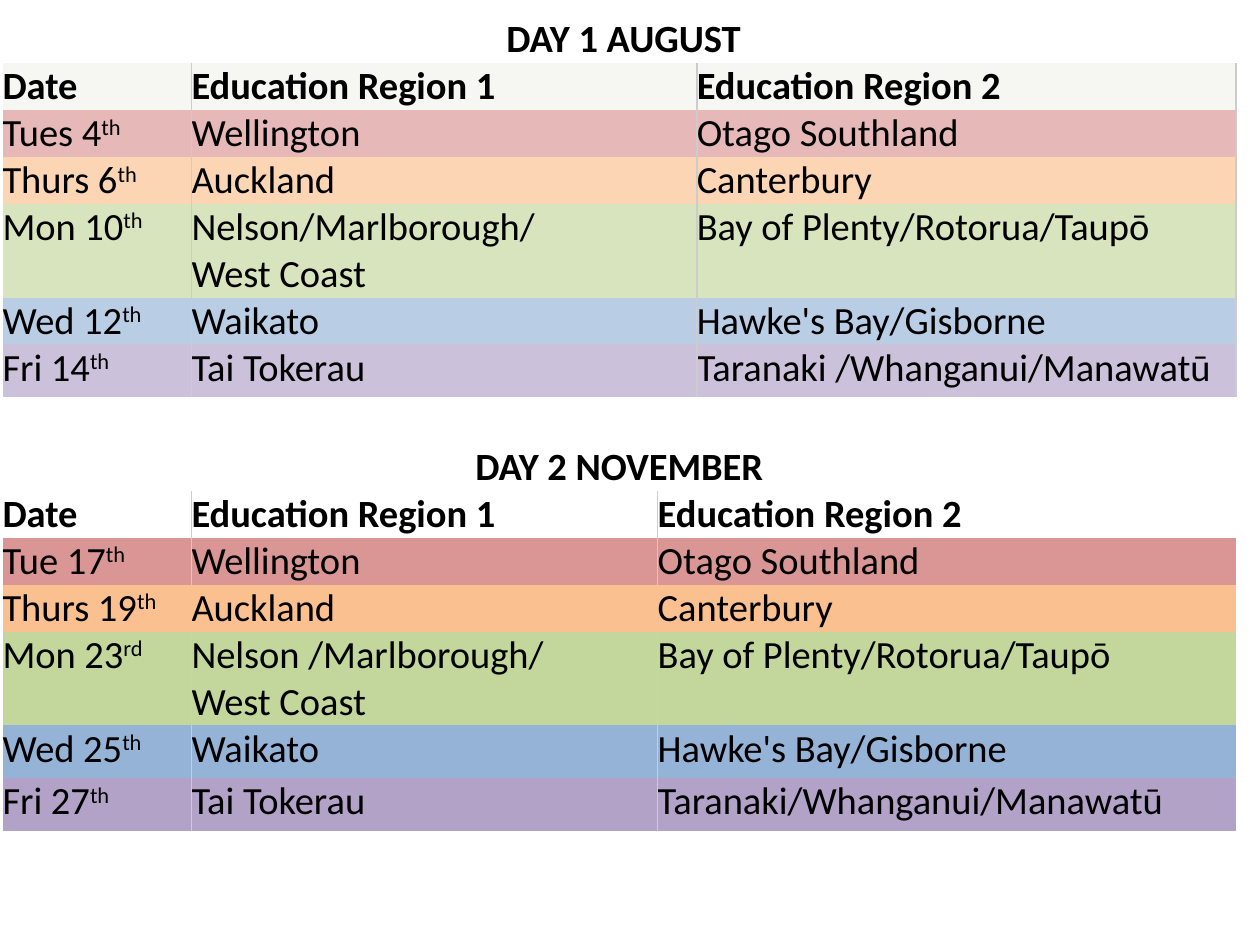
from dataclasses import dataclass

from lxml.etree import SubElement
from pptx import Presentation
from pptx.dml.color import RGBColor
from pptx.enum.text import PP_ALIGN as Align
from pptx.oxml import parse_xml
from pptx.oxml.ns import nsdecls, qn
from pptx.util import Inches, Pt

FONT, SIZE, BLACK, RULE = "Calibri", 22, "000000", "CCCCCC"
NO_STYLE = "{2D5ABB26-0587-4C30-8999-92F81FD0307C}"
COLS = (1.5, 3.7, 0.31, 4.28)
LINE, TALL, LOW, DOUBLE = 0.28, 0.42, 0.14, 0.57


@dataclass
class Visit:
    """One dated row of the programme."""
    day: str
    suffix: str
    first: str
    second: str
    fill: str
    height: float = LINE


@dataclass
class Section:
    """A titled block; split is the grid column where region 2 starts."""
    title: str
    split: int
    head_fill: str
    visits: list[Visit]


SECTIONS = [
    Section("\u00a0DAY 1 AUGUST", 3, "F6F7F2", [
        Visit("Tues 4", "th", "Wellington", "Otago Southland", "E6B9B8"),
        Visit("Thurs 6", "th", "Auckland", "Canterbury", "FCD5B5"),
        Visit("Mon 10", "th", "Nelson/Marlborough/\nWest Coast",
              "Bay of Plenty/Rotorua/Taupō", "D7E4BD", DOUBLE),
        Visit("Wed 12", "th", "Waikato", "Hawke's Bay/Gisborne", "B9CDE5"),
        Visit("Fri 14", "th", "Tai Tokerau", "Taranaki /Whanganui/Manawatū",
              "CCC1DA", TALL),
    ]),
    Section("DAY 2 NOVEMBER", 2, "FFFFFF", [
        Visit("Tue 17", "th", "Wellington", "Otago Southland", "D99694"),
        Visit("Thurs 19", "th", "Auckland", "Canterbury", "FAC090"),
        Visit("Mon 23", "rd", "Nelson /Marlborough/\nWest Coast",
              "Bay of Plenty/Rotorua/Taupō", "C3D69B", DOUBLE),
        Visit("Wed 25", "th", "Waikato", "Hawke's Bay/Gisborne", "95B3D7", TALL),
        Visit("Fri 27", "th", "Tai Tokerau", "Taranaki/Whanganui/Manawatū",
              "B3A2C7", TALL),
    ]),
]


def color(value: str) -> RGBColor:
    """Turn a hex string into a colour."""
    return RGBColor.from_string(value)


def add_run(p, text: str, bold: bool = False, raised: bool = False) -> None:
    """Append one run, raised for ordinal suffixes."""
    r = p.add_run()
    r.text = text
    r.font.name, r.font.size, r.font.bold = FONT, Pt(SIZE), bold
    r.font.color.rgb = color(BLACK)
    if raised:
        r.font._element.set("baseline", "30000")


def add_borders(cell, sides: str) -> None:
    """Draw thin rules on the given sides, L and R."""
    for i, side in enumerate(sides):
        cell._tc.get_or_add_tcPr().insert(i, parse_xml(
            f'<a:ln{side} {nsdecls("a")} w="12700"><a:solidFill>'
            f'<a:srgbClr val="{RULE}"/></a:solidFill></a:ln{side}>'))


def fill_cell(cell, text: str, fill: str = "", sides: str = "",
              bold: bool = False, suffix: str = "", align=None) -> None:
    """Set the text, fill and rules of one cell."""
    cell.margin_left = cell.margin_right = cell.margin_top = cell.margin_bottom = 0
    if fill:
        cell.fill.solid()
        cell.fill.fore_color.rgb = color(fill)
    add_borders(cell, sides)
    tf = cell.text_frame
    for i, line in enumerate(text.split("\n")):
        p = tf.add_paragraph() if i else tf.paragraphs[0]
        if align is not None:
            p.alignment = align
        if line:
            add_run(p, line, bold)
        else:
            SubElement(p._p, qn("a:endParaRPr"), sz=str(SIZE * 100))
        if suffix:
            add_run(p, suffix, raised=True)


def fill_banner(table, row: int, text: str) -> None:
    """Fill a row that spans every column."""
    table.cell(row, 0).merge(table.cell(row, len(COLS) - 1))
    fill_cell(table.cell(row, 0), text, bold=True, align=Align.CENTER)
    table.rows[row].height = Inches(LOW)


def fill_row(table, row: int, split: int, visit: Visit, bold: bool = False) -> None:
    """Fill a date row, with its two regions parted at the split column."""
    table.rows[row].height = Inches(visit.height)
    for start, end in ((1, split - 1), (split, len(COLS) - 1)):
        if end > start:
            table.cell(row, start).merge(table.cell(row, end))
    fill_cell(table.cell(row, 0), visit.day, visit.fill, "R", bold, visit.suffix)
    fill_cell(table.cell(row, 1), visit.first, visit.fill, "LR", bold)
    fill_cell(table.cell(row, split), visit.second, visit.fill, "L", bold)


def main() -> None:
    """Build the programme slide."""
    prs = Presentation()
    prs.slide_width, prs.slide_height = Inches(10), Inches(7.5)
    s = prs.slides.add_slide(prs.slide_layouts[6])
    count = sum(len(section.visits) + 2 for section in SECTIONS) + len(SECTIONS) - 1
    frame = s.shapes.add_table(count, len(COLS), Inches(0.02), Inches(0.13),
                               Inches(sum(COLS)), Inches(6.41))
    table = frame.table
    table.first_row = table.horz_banding = False
    table._tbl.tblPr.find(qn("a:tableStyleId")).text = NO_STYLE
    for column, width in zip(table.columns, COLS):
        column.width = Inches(width)
    row = 0
    for section in SECTIONS:
        if row:
            fill_banner(table, row, "")
            row += 1
        fill_banner(table, row, section.title)
        head = Visit("Date", "", "Education Region 1", "Education Region 2",
                     section.head_fill)
        for i, visit in enumerate([head, *section.visits], 1):
            fill_row(table, row + i, section.split, visit, bold=visit is head)
        row += len(section.visits) + 2
    frame.height = Inches(6.41)
    prs.save("out.pptx")


if __name__ == "__main__":
    main()
